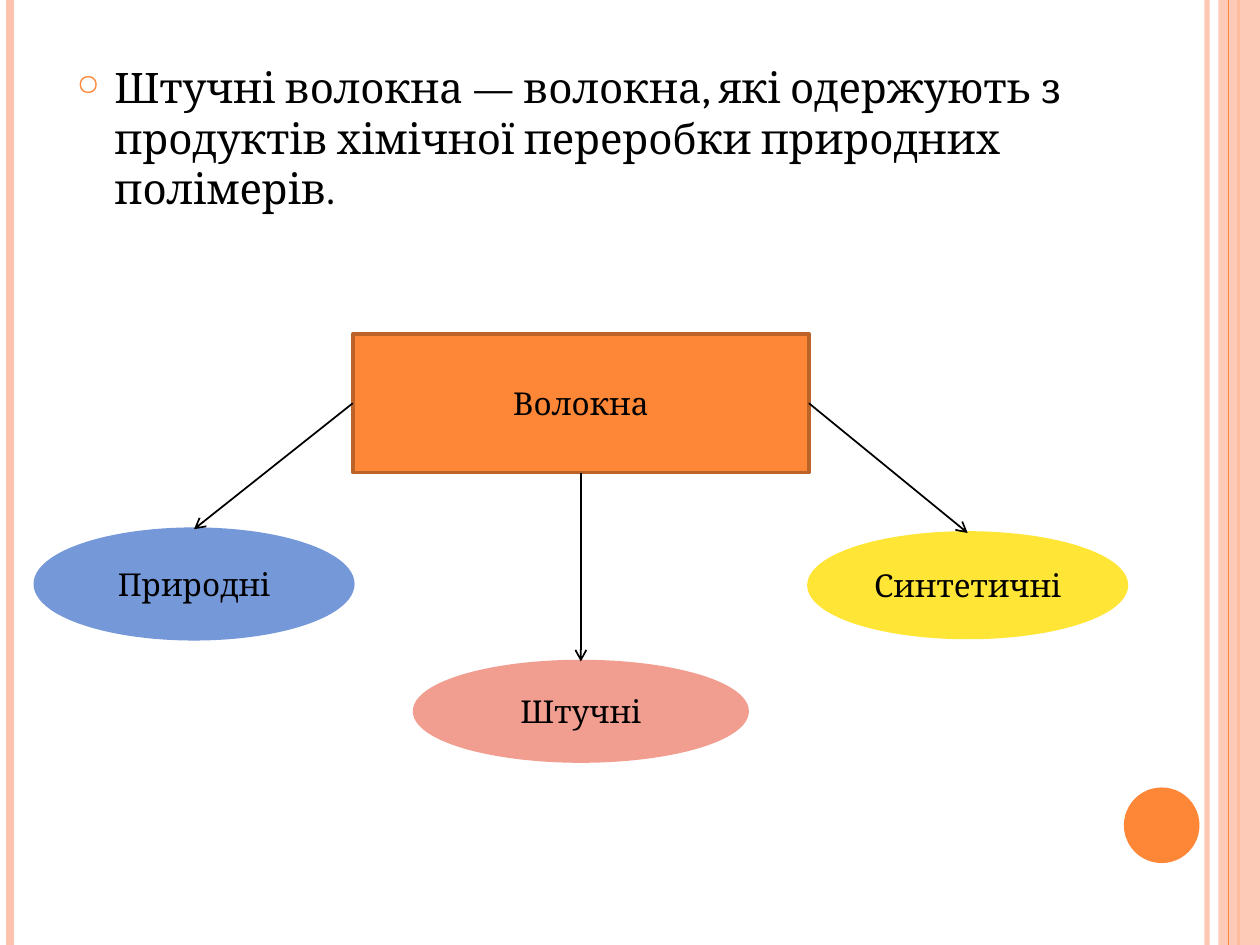
import pptx
import pptx.util
import pptx.dml.color
import pptx.enum.shapes
import pptx.enum.text
import pptx.oxml.ns
from lxml import etree

Inches = pptx.util.Inches
Pt = pptx.util.Pt
Shapes = pptx.enum.shapes.MSO_SHAPE
Anchor = pptx.enum.text.MSO_ANCHOR
Align = pptx.enum.text.PP_ALIGN
qn = pptx.oxml.ns.qn


def color(value):
    return pptx.dml.color.RGBColor.from_string(value)


def add_element(parent, tag, **attributes):
    return etree.SubElement(parent, qn(tag), attributes)


class SlideBuilder:
    font_name = "Cambria"
    text_color = "000000"
    accent = "FE8637"
    pale = "FEC3AE"

    def __init__(self, slide):
        self.slide = slide

    def set_opacity(self, fill, percent):
        """Make a solid fill or line color partly transparent."""
        if percent < 100:
            for srgb in fill.iter(qn("a:srgbClr")):
                add_element(srgb, "a:alpha", val=str(percent * 1000))

    def add_run(self, paragraph, text, size):
        run = paragraph.add_run()
        run.text = text
        run.font.name = self.font_name
        run.font.size = Pt(size)
        run.font.color.rgb = color(self.text_color)

    def add_shape(self, kind, box, fill, line=None, text=None, opacity=100):
        shape = self.slide.shapes.add_shape(kind, *map(Inches, box))
        shape.shadow.inherit = False
        shape.fill.solid()
        shape.fill.fore_color.rgb = color(fill)
        self.set_opacity(shape.element.spPr, opacity)
        if line:
            shape.line.color.rgb = color(line)
            shape.line.width = Pt(2)
        else:
            shape.line.fill.background()
        if text:
            shape.text_frame.vertical_anchor = Anchor.MIDDLE
            paragraph = shape.text_frame.paragraphs[0]
            paragraph.alignment = Align.CENTER
            self.add_run(paragraph, text, 18)
        return shape

    def add_line(self, start, end, line, width, opacity=100):
        connector = self.slide.shapes.add_connector(
            pptx.enum.shapes.MSO_CONNECTOR.STRAIGHT, *map(Inches, start + end))
        connector.line.color.rgb = color(line)
        connector.line.width = Pt(width)
        properties = connector.element.spPr
        self.set_opacity(properties, opacity)
        add_element(properties, "a:effectLst")
        return connector

    def add_arrow(self, source, side, target):
        """Join a side of the source to the top of the target."""
        connector = self.add_line((0, 0), (1, 1), self.text_color, 1)
        connector.begin_connect(source, side)
        connector.end_connect(target, 0)
        add_element(connector.line._get_or_add_ln(), "a:tailEnd", type="arrow")

    def add_bullet_text(self, box, text, size):
        frame = self.slide.shapes.add_textbox(*map(Inches, box)).text_frame
        frame.word_wrap = True
        paragraph = frame.paragraphs[0]
        properties = paragraph._p.get_or_add_pPr()
        properties.set("marL", str(Inches(0.3)))
        properties.set("indent", str(-Inches(0.3)))
        bullet_color = add_element(properties, "a:buClr")
        add_element(bullet_color, "a:srgbClr", val=self.accent)
        add_element(properties, "a:buSzPct", val="70000")
        add_element(properties, "a:buChar", char="○")
        self.add_run(paragraph, text, size)


def main():
    presentation = pptx.Presentation()
    presentation.slide_width = Inches(10)
    presentation.slide_height = Inches(7.5)
    builder = SlideBuilder(
        presentation.slides.add_slide(presentation.slide_layouts[6]))

    # Page decoration: vertical stripes and a disc
    def add_stripe(x, line, width, opacity=100):
        builder.add_line((x, 0), (x, 7.5), line, width, opacity)

    add_stripe(9.58, builder.pale, 3, 93)
    add_stripe(0.08, builder.pale, 4.5)
    add_stripe(9.83, builder.accent, 1.5)
    builder.add_shape(Shapes.RECTANGLE, (9.67, 0, 0.33, 7.5),
                      builder.pale, opacity=87)
    add_stripe(9.75, builder.accent, 0.75)
    builder.add_shape(Shapes.OVAL, (8.92, 6.25, 0.6, 0.6), builder.accent)

    # Definition
    builder.add_bullet_text(
        (0.51, 0.44, 8.17, 5.33),
        "Штучні волокна — волокна, які одержують з продуктів хімічної "
        "переробки природних полімерів.", 24)

    # Fibre classification: root, kinds and the side each arrow leaves from
    root = builder.add_shape(Shapes.RECTANGLE, (2.8, 2.65, 3.62, 1.1),
                             builder.accent, "BC6329", "Волокна")
    kinds = [
        ("Природні", (0.28, 4.2, 2.52, 0.87), "7598D9", 1),
        ("Штучні", (3.29, 5.25, 2.64, 0.79), "F19E91", 2),
        ("Синтетичні", (6.42, 4.23, 2.52, 0.83), "FFE636", 3),
    ]
    for text, box, fill, side in kinds:
        ellipse = builder.add_shape(Shapes.OVAL, box, fill, fill, text)
        builder.add_arrow(root, side, ellipse)

    presentation.save("out.pptx")


if __name__ == "__main__":
    main()
